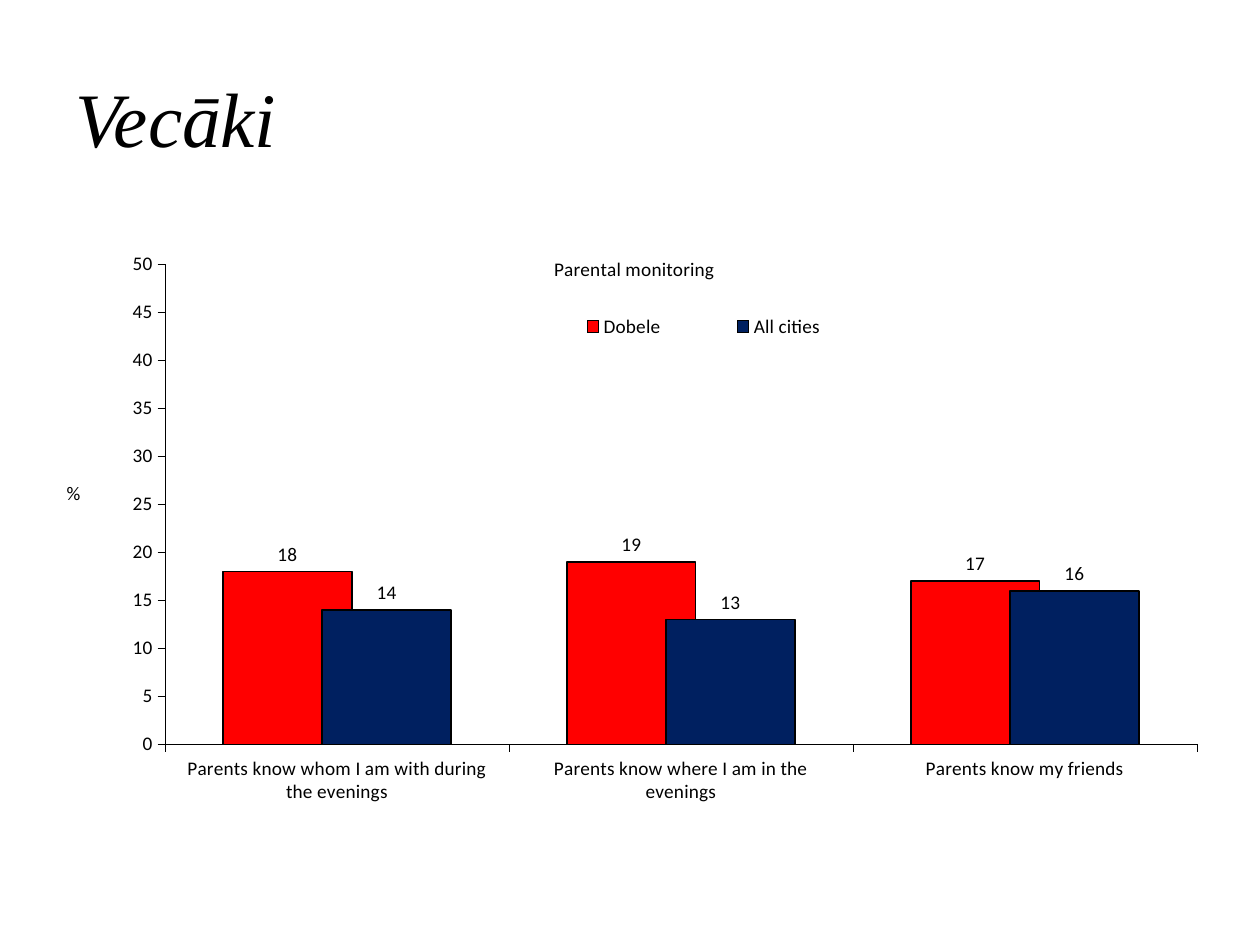
from lxml import etree
from pptx import Presentation
from pptx import util as u
from pptx.chart.data import CategoryChartData
from pptx.dml.color import RGBColor
from pptx.enum import chart as charts, text
from pptx.oxml.ns import qn

COLORS = {"ink": "000000", "paper": "FFFFFF", "dobele": "FF0000", "cities": "002060"}
CATEGORIES = [
    "Parents know whom I am with during the evenings",
    "Parents know where I am in the evenings",
    "Parents know my friends",
]
SERIES = [
    ("Dobele", (18, 19, 17), "dobele"),
    ("All cities", (14, 13, 16), "cities"),
]


def color(name):
    return RGBColor.from_string(COLORS[name])


def style_font(font, size=11, name="Calibri", ink="ink", italic=False):
    font.size, font.name = u.Pt(size), name
    font.bold, font.italic = False, italic
    font.color.rgb = color(ink)


def write(frame, words, **style):
    """Put words in the first paragraph of a text frame and format them."""
    span = frame.paragraphs[0].add_run()
    span.text = words
    style_font(span.font, **style)


def set_line(line, width):
    line.color.rgb = color("ink")
    line.width = u.Pt(width)


def set_layout(element, inner=False, **shares):
    """Place a chart part by shares (x, y, w, h) of the chart's size."""
    old = element.find(qn("c:layout"))
    if old is not None:
        element.remove(old)
    layout = etree.Element(qn("c:layout"))
    manual = etree.SubElement(layout, qn("c:manualLayout"))
    if inner:
        etree.SubElement(manual, qn("c:layoutTarget")).set("val", "inner")
    for key in "xy":
        etree.SubElement(manual, qn(f"c:{key}Mode")).set("val", "edge")
    for key, share in shares.items():
        etree.SubElement(manual, qn(f"c:{key}")).set("val", str(share))
    overlay = element.find(qn("c:overlay"))
    if overlay is None:
        element.insert(0, layout)
    else:
        overlay.addprevious(layout)


def add_heading(page, left, top, width, height):
    box = page.shapes.add_textbox(left, top, width, height)
    frame = box.text_frame
    frame.word_wrap = True
    frame.vertical_anchor = text.MSO_ANCHOR.MIDDLE
    write(frame, "Vecāki", size=44, name="Times New Roman", italic=True)


def style_axes(chart):
    for axis in (chart.category_axis, chart.value_axis):
        axis.has_major_gridlines = False
        axis.major_tick_mark = charts.XL_TICK_MARK.OUTSIDE
        axis.minor_tick_mark = charts.XL_TICK_MARK.NONE
        set_line(axis.format.line, 0.25)
        style_font(axis.tick_labels.font)
    axis = chart.value_axis
    axis.minimum_scale, axis.maximum_scale, axis.major_unit = 0, 50, 5
    axis.tick_labels.number_format = "0"
    axis.tick_labels.number_format_is_linked = False
    # Upright unit label beside the axis
    title = axis.axis_title
    write(title.text_frame, "%")
    title.text_frame._txBody.bodyPr.set("rot", "0")
    set_layout(title._element, x=0, y=0.41)


def style_bars(plot):
    plot.gap_width, plot.overlap = 90, 23
    plot.vary_by_categories = False
    for series, (_, _, fill) in zip(plot.series, SERIES):
        series.format.fill.solid()
        series.format.fill.fore_color.rgb = color(fill)
        set_line(series.format.line, 1)
        labels = series.data_labels
        labels.show_value = True
        labels.number_format, labels.number_format_is_linked = "0", False
        labels.position = charts.XL_LABEL_POSITION.OUTSIDE_END
        style_font(labels.font)


def add_monitoring_chart(page, left, top, width, height):
    data = CategoryChartData(number_format="0")
    data.categories = CATEGORIES
    for name, values, _ in SERIES:
        data.add_series(name, values)
    kind = charts.XL_CHART_TYPE.COLUMN_CLUSTERED
    chart = page.shapes.add_chart(kind, left, top, width, height, data).chart
    style_font(chart.font)
    style_axes(chart)
    style_bars(chart.plots[0])
    plot_area = chart._chartSpace.chart.plotArea
    set_layout(plot_area, inner=True, x=0.09, y=0.07, w=0.91, h=0.77)

    # Title and legend lie over the plot
    chart.has_title = True
    write(chart.chart_title.text_frame, "Parental monitoring")
    set_layout(chart.chart_title._element, x=0.43, y=0.05)
    chart.has_legend = True
    legend = chart.legend
    legend.position = charts.XL_LEGEND_POSITION.RIGHT
    legend.include_in_layout = False
    style_font(legend.font)
    set_layout(legend._element, x=0.4, y=0.14, w=0.33, h=0.06)


def main():
    deck = Presentation()
    deck.slide_width, deck.slide_height = u.Cm(25.4), u.Cm(19.05)
    page = deck.slides.add_slide(deck.slide_layouts[6])
    page.background.fill.solid()
    page.background.fill.fore_color.rgb = color("paper")
    left, width = u.Cm(1.27), u.Cm(22.86)
    add_heading(page, left, u.Cm(0.76), width, u.Cm(3.18))
    add_monitoring_chart(page, left, u.Cm(4.45), width, u.Cm(12.57))
    deck.save("out.pptx")


if __name__ == "__main__":
    main()
